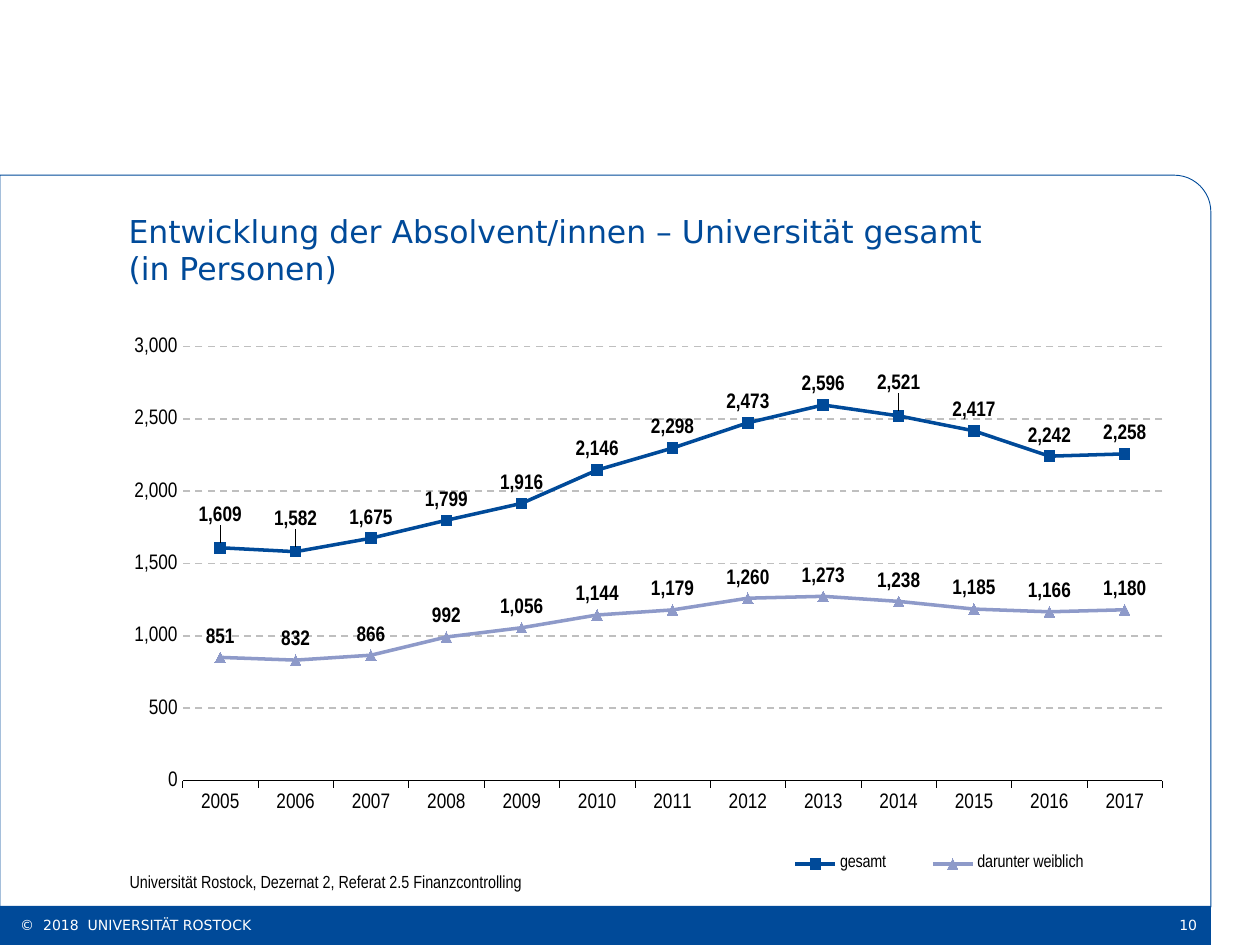
"""Build a slide with a line chart of graduates at a university, 2005 to 2017."""
from lxml import etree
from pptx import Presentation
from pptx.chart.data import CategoryChartData
from pptx.dml.color import RGBColor
from pptx.enum.chart import XL_CHART_TYPE, XL_LABEL_POSITION, XL_LEGEND_POSITION, XL_MARKER_STYLE, XL_TICK_MARK
from pptx.enum.dml import MSO_LINE
from pptx.enum.shapes import MSO_SHAPE
from pptx.enum.text import MSO_ANCHOR, PP_ALIGN
from pptx.oxml.ns import qn
from pptx.util import Inches, Pt

ABOVE = XL_LABEL_POSITION.ABOVE
NO_TICK, TICK_OUTSIDE = XL_TICK_MARK.NONE, XL_TICK_MARK.OUTSIDE
LEFT, RIGHT = PP_ALIGN.LEFT, PP_ALIGN.RIGHT
SQUARE, TRIANGLE = XL_MARKER_STYLE.SQUARE, XL_MARKER_STYLE.TRIANGLE
BLUE, LILAC, LILAC_MARKER = "004A99", "8E9AC9", "7588BF"
BLACK, WHITE, GRID_GRAY = "000000", "FFFFFF", "BFBFBF"
SANS, NARROW = "DejaVu Sans", "Arial Narrow"
color = RGBColor.from_string


def write_text(shape, text, box, size, font_name, hex_color, align=LEFT, left_inset=0.1):
    """Place a text shape and fill it with formatted text."""
    shape.left, shape.top, shape.width, shape.height = [Inches(value) for value in box]
    frame = shape.text_frame
    frame.word_wrap = True
    frame.vertical_anchor = MSO_ANCHOR.MIDDLE
    frame.margin_left, frame.margin_right = Inches(left_inset), Inches(0.1)
    frame.margin_top = frame.margin_bottom = Inches(0.05)
    frame.text = text
    for paragraph in frame.paragraphs:
        paragraph.alignment = align
        for run in paragraph.runs:
            run.font.size, run.font.name = Pt(size), font_name
            run.font.color.rgb = color(hex_color)


def set_layout(element, index, **settings):
    """Give a chart element a manual layout."""
    for old_layout in element.findall(qn("c:layout")):
        element.remove(old_layout)
    layout = etree.Element(qn("c:layout"))
    manual = etree.SubElement(layout, qn("c:manualLayout"))
    for name, value in settings.items():
        etree.SubElement(manual, qn(f"c:{name}")).set("val", str(value))
    element.insert(index, layout)


presentation = Presentation()
presentation.slide_width, presentation.slide_height = Inches(10), Inches(7.5)
slide = presentation.slides.add_slide(presentation.slide_layouts[5])

footer_bar = slide.shapes.add_shape(MSO_SHAPE.RECTANGLE, 0, Inches(7.19), Inches(9.61), Inches(0.31))
footer_bar.shadow.inherit = False
footer_bar.fill.solid()
footer_bar.fill.fore_color.rgb = color(BLUE)
footer_bar.line.fill.background()

content_frame = slide.shapes.add_shape(
    MSO_SHAPE.ROUND_1_RECTANGLE, 0, Inches(1.39), Inches(9.61), Inches(5.81))
content_frame.shadow.inherit = False
content_frame.adjustments[0] = 0.05
content_frame.fill.background()
content_frame.line.color.rgb = color(BLUE)
content_frame.line.width = Pt(0.5)

chart_data = CategoryChartData(number_format="#,##0")
chart_data.categories = [str(year) for year in range(2005, 2018)]
chart_data.add_series("gesamt", [
    1609, 1582, 1675, 1799, 1916, 2146, 2298, 2473, 2596, 2521, 2417, 2242, 2258])
chart_data.add_series("darunter weiblich", [
    851, 832, 866, 992, 1056, 1144, 1179, 1260, 1273, 1238, 1185, 1166, 1180])
chart = slide.shapes.add_chart(
    XL_CHART_TYPE.LINE_MARKERS, Inches(0.87), Inches(2.25), Inches(8.39), Inches(4.8), chart_data).chart
chart.has_title = False
chart.has_legend = True
chart.legend.position = XL_LEGEND_POSITION.BOTTOM
chart.legend.include_in_layout = False
plot = chart.plots[0]
plot.vary_by_categories = False

category_axis, value_axis = chart.category_axis, chart.value_axis
category_axis.major_tick_mark = TICK_OUTSIDE
category_axis.format.line.color.rgb = color(BLACK)
category_axis.format.line.width = Pt(0.25)
value_axis.major_tick_mark = NO_TICK
value_axis.format.line.fill.background()
value_axis.minimum_scale, value_axis.maximum_scale, value_axis.major_unit = 0, 3010, 500
value_axis.tick_labels.number_format = "#,##0"
value_axis.tick_labels.number_format_is_linked = False
grid_line = value_axis.major_gridlines.format.line
grid_line.color.rgb = color(GRID_GRAY)
grid_line.width = Pt(1)
grid_line.dash_style = MSO_LINE.DASH

chart_fonts = [
    (category_axis.tick_labels.font, 12, False),
    (value_axis.tick_labels.font, 12, False),
    (chart.legend.font, 10, False),
]
series_styles = [(BLUE, SQUARE, BLUE), (LILAC, TRIANGLE, LILAC_MARKER)]
for series, (line_color, marker_style, marker_color) in zip(plot.series, series_styles):
    series.smooth = False
    series.format.line.color.rgb = color(line_color)
    series.format.line.width = Pt(2)
    series.marker.style, series.marker.size = marker_style, 6
    series.marker.format.fill.solid()
    series.marker.format.fill.fore_color.rgb = color(marker_color)
    series.marker.format.line.color.rgb = color(marker_color)
    series.data_labels.show_value = True
    series.data_labels.position = ABOVE
    chart_fonts.append((series.data_labels.font, 12, True))

total_series = plot.series[0]
raised_labels = {0: -0.02, 1: -0.02, 9: -0.02}
for index in raised_labels:
    label = total_series.points[index].data_label
    label.position = ABOVE
    chart_fonts.append((label.font, 12, True))

for font, size, bold in chart_fonts:
    font.name, font.size, font.bold = NARROW, Pt(size), bold
    font.color.rgb = color(BLACK)

chart_element = chart.element
for label_element in chart_element.iter(qn("c:dLbl")):
    index = int(label_element.find(qn("c:idx")).get("val"))
    set_layout(label_element, 1, x=0, y=raised_labels[index])
set_layout(next(chart_element.iter(qn("c:plotArea"))), 0, layoutTarget="inner",
           xMode="edge", yMode="edge", x=0.069, y=0.102, w=0.927, h=0.72)
set_layout(next(chart_element.iter(qn("c:legend"))), 1,
           xMode="edge", yMode="edge", x=0.61, y=0.93, w=0.35, h=0.06)

write_text(slide.shapes.title, "Entwicklung der Absolvent/innen – Universität gesamt\v(in Personen)",
           (1.02, 1.47, 8.29, 1.02), 18, SANS, BLUE, left_inset=0)
text_boxes = [
    ("10", (8.83, 7.18, 0.77, 0.32), 8, SANS, WHITE, RIGHT, 0.1),
    ("©  2018  UNIVERSITÄT ROSTOCK", (0.16, 7.18, 8.48, 0.32), 8, SANS, WHITE, LEFT, 0),
    ("Universität Rostock, Dezernat 2, Referat 2.5 Finanzcontrolling",
     (0.93, 6.86, 3.64, 0.27), 10, NARROW, BLACK, LEFT, 0.1),
]
for text, box, *text_format in text_boxes:
    write_text(slide.shapes.add_textbox(0, 0, 0, 0), text, box, *text_format)

presentation.save("out.pptx")
